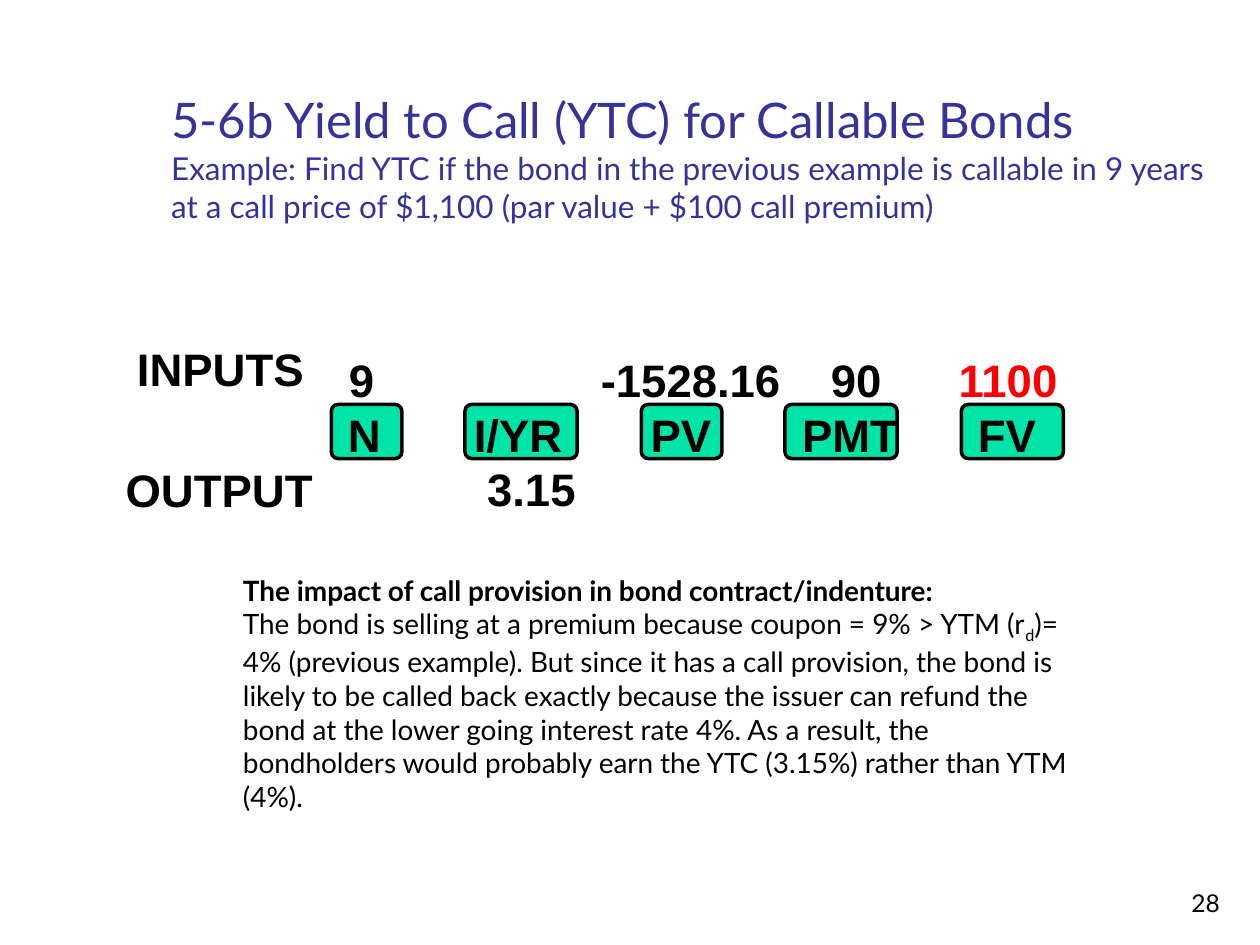
from dataclasses import dataclass

from lxml import etree
from pptx import Presentation
from pptx.dml.color import RGBColor
from pptx.enum.shapes import MSO_SHAPE
from pptx.enum.text import MSO_ANCHOR, PP_ALIGN
from pptx.oxml.ns import qn
from pptx.util import Pt

ROUNDED = MSO_SHAPE.ROUNDED_RECTANGLE
TOP, MIDDLE, BOTTOM = MSO_ANCHOR.TOP, MSO_ANCHOR.MIDDLE, MSO_ANCHOR.BOTTOM
CENTER, RIGHT = PP_ALIGN.CENTER, PP_ALIGN.RIGHT


@dataclass(frozen=True)
class Theme:
    ink: RGBColor = RGBColor(0x00, 0x00, 0x00)
    heading: RGBColor = RGBColor(0x33, 0x33, 0x99)
    key: RGBColor = RGBColor(0x00, 0xE4, 0xA8)
    changed: RGBColor = RGBColor(0xFF, 0x00, 0x00)
    text_font: str = "Lato"
    key_font: str = "Arial"
    title: int = 28
    subtitle: int = 18
    body: int = 16
    number: int = 14
    calculator: int = 26


theme = Theme()
prs = Presentation()
prs.slide_width, prs.slide_height = Pt(720), Pt(540)
slide = prs.slides.add_slide(prs.slide_layouts[6])


def add_frame(left, top, width, height, anchor=TOP):
    frame = slide.shapes.add_textbox(Pt(left), Pt(top), Pt(width), Pt(height)).text_frame
    frame.word_wrap = True
    frame.vertical_anchor = anchor
    return frame


def add_text(paragraph, text, *, size=theme.body, color=theme.ink,
             font=theme.text_font, bold=False, baseline=0):
    run = paragraph.add_run()
    run.text = text
    run.font.size = Pt(size)
    run.font.name = font
    run.font.bold = bold
    run.font.color.rgb = color
    if baseline:
        run.font._element.set("baseline", str(baseline))


page_number = add_frame(554.4, 491.76, 149.76, 36, BOTTOM).paragraphs[0]
page_number.alignment = RIGHT
add_text(page_number, "28", size=theme.number)

heading = add_frame(90.72, 16.56, 613.44, 115.2, BOTTOM).paragraphs[0]
add_text(heading, "5-6b Yield to Call (YTC) for Callable Bonds",
         size=theme.title, color=theme.heading)
heading.add_line_break()
add_text(heading, "Example: Find YTC if the bond in the previous example is callable "
         "in 9 years at a call price of $1,100 (par value + $100 call premium)",
         size=theme.subtitle, color=theme.heading)

explanation = add_frame(131.76, 324, 486, 142.56)
add_text(explanation.paragraphs[0],
         "The impact of call provision in bond contract/indenture:", bold=True)
impact = explanation.add_paragraph()
add_text(impact, "The bond is selling at a premium because coupon = 9% > YTM (r")
add_text(impact, "d", baseline=-25000)
add_text(impact, ")= 4% (previous example). But since it has a call provision, the bond is "
         "likely to be called back exactly because the issuer can refund the bond at the "
         "lower going interest rate 4%. As a result, the bondholders would probably earn "
         "the YTC (3.15%) rather than YTM (4%).")

for left, width in [(189.36, 40.32), (265.68, 64.08), (366.48, 46.08),
                    (448.56, 64.08), (549.36, 58.32)]:
    key = slide.shapes.add_shape(ROUNDED, Pt(left), Pt(231.12), Pt(width), Pt(30.96))
    key.adjustments[0] = 0.125
    key.shadow.inherit = False
    key.fill.solid()
    key.fill.fore_color.rgb = theme.key
    key.line.color.rgb = theme.ink
    key.line.width = Pt(2)

calculator_rows = [
    [("9", 144), ("-1528.16", 288), ("90", 419.5), ("1100", 492.5)],
    [("N", 143.5), ("I/YR", 215.5), ("PV", 316.5), ("PMT", 403), ("FV", 503.5)],
    [("3.15", 223)],
]
calculator = add_frame(48.24, 198, 619.2, 100.8)
calculator.margin_top = Pt(3.6)
for index, row in enumerate(calculator_rows):
    line = calculator.add_paragraph() if index else calculator.paragraphs[0]
    stops = etree.SubElement(line._p.get_or_add_pPr(), qn("a:tabLst"))
    for entry, position in row:
        etree.SubElement(stops, qn("a:tab"), pos=str(int(Pt(position))), algn="l")
    line.line_spacing = Pt(31)
    for entry, position in row:
        add_text(line, "\t" + entry, size=theme.calculator, font=theme.key_font, bold=True,
                 color=theme.changed if entry == "1100" else theme.ink)

for label, left, top in [("INPUTS", 56, 187.92), ("OUTPUT", 55.28, 257.04)]:
    row_label = add_frame(left, top, 140, 44.64, MIDDLE).paragraphs[0]
    row_label.alignment = CENTER
    add_text(row_label, label, size=theme.calculator, font=theme.key_font, bold=True)

prs.save("out.pptx")
